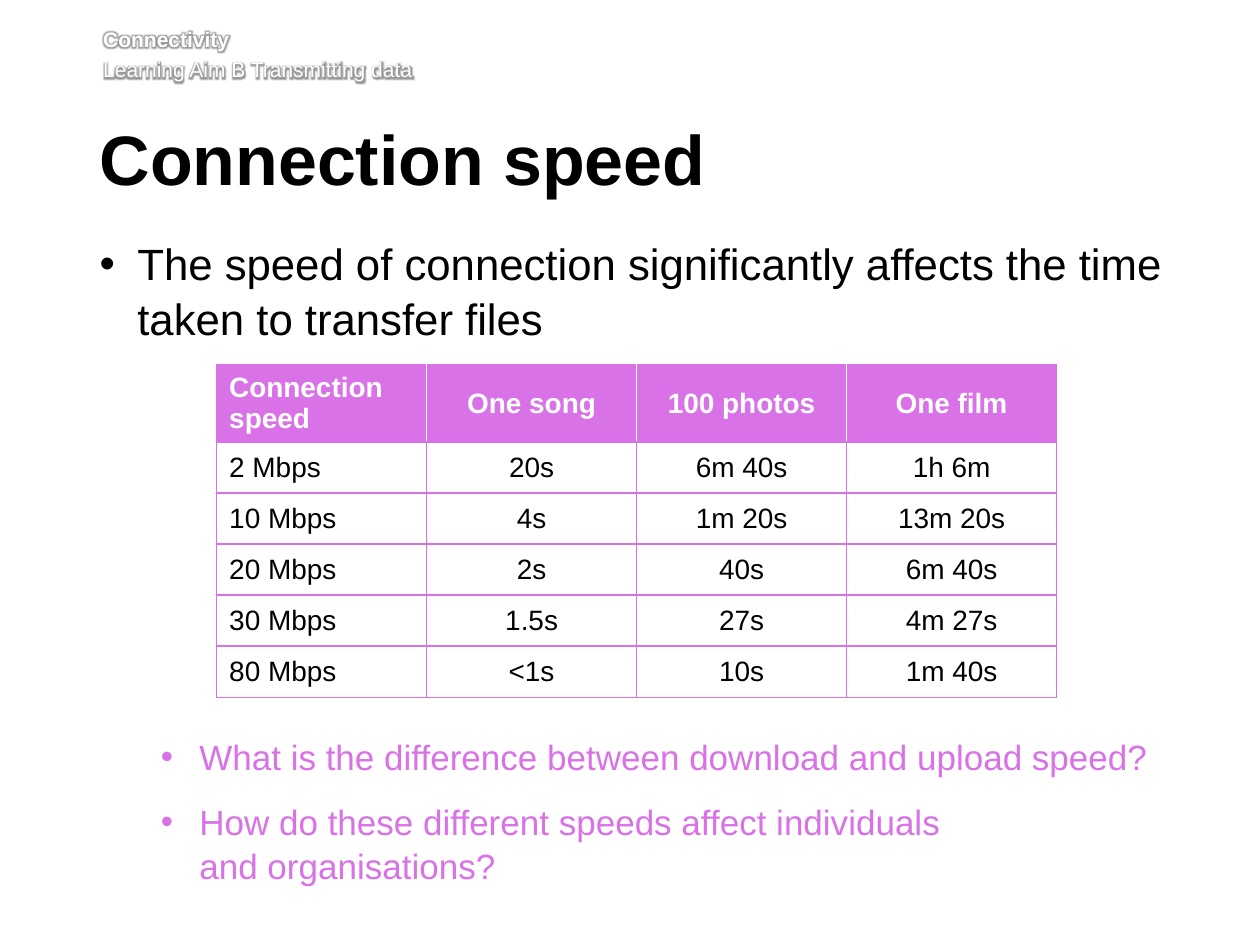
from lxml import etree
from pptx import Presentation
from pptx.dml.color import RGBColor
from pptx.enum.text import MSO_ANCHOR, MSO_AUTO_SIZE, PP_ALIGN
from pptx.oxml.ns import qn
from pptx.util import Pt

TOP, MIDDLE = MSO_ANCHOR.TOP, MSO_ANCHOR.MIDDLE
LEFT, CENTER = PP_ALIGN.LEFT, PP_ALIGN.CENTER
NO_FIT = MSO_AUTO_SIZE.NONE

FONT = "Arial"
COLORS = {"text": "000000", "light": "FFFFFF", "accent": "D972E7"}
ROWS = [
    ["Connection speed", "One song", "100 photos", "One film"],
    ["2 Mbps", "20s", "6m 40s", "1h 6m"],
    ["10 Mbps", "4s", "1m 20s", "13m 20s"],
    ["20 Mbps", "2s", "40s", "6m 40s"],
    ["30 Mbps", "1.5s", "27s", "4m 27s"],
    ["80 Mbps", "<1s", "10s", "1m 40s"],
]
COL_WIDTH, HEAD_HEIGHT, ROW_HEIGHT = 120, 44, 29.2


def rgb(name):
    return RGBColor.from_string(COLORS[name])


def write(para, text, size, color="text", bold=False, align=LEFT,
          before=0, after=0, line=None):
    para.text = text
    para.alignment = align
    para.space_before, para.space_after = Pt(before), Pt(after)
    if line:
        para.line_spacing = line
    for run in para.runs:
        font = run.font
        font.name, font.size, font.bold = FONT, Pt(size), bold
        font.color.rgb = rgb(color)


def place(shape, left, top, width, height, insets):
    """Set the bounds and text margins of a shape, and return its text frame."""
    shape.left, shape.top = Pt(left), Pt(top)
    shape.width, shape.height = Pt(width), Pt(height)
    frame = shape.text_frame
    frame.word_wrap, frame.auto_size = True, NO_FIT
    frame.vertical_anchor = TOP
    (frame.margin_left, frame.margin_top,
     frame.margin_right, frame.margin_bottom) = map(Pt, insets)
    return frame


def add_bullet(para, margin, hang):
    props = para._p.get_or_add_pPr()
    props.set("marL", str(Pt(margin)))
    props.set("indent", str(-Pt(hang)))
    etree.SubElement(props, qn("a:buFont"), typeface=FONT)
    etree.SubElement(props, qn("a:buChar"), char="•")


def add_glow(run):
    """Put a soft dark halo behind the text of a run."""
    effects = etree.Element(qn("a:effectLst"))
    glow = etree.SubElement(effects, qn("a:glow"), rad=str(Pt(5)))
    shade = etree.SubElement(glow, qn("a:srgbClr"), val=COLORS["text"])
    etree.SubElement(shade, qn("a:alpha"), val="40000")
    run.font._element.find(qn("a:solidFill")).addnext(effects)


def add_header(slide):
    box = slide.shapes.add_textbox(0, 0, 0, 0)
    frame = place(box, 59, 12.2, 635, 35.3, (0, 0, 0, 3.6))
    first, second = frame.paragraphs[0], frame.add_paragraph()
    write(first, "Connectivity", 12, "light", bold=True)
    write(second, "Learning Aim B Transmitting data", 12, "light", before=2.9)
    # The first line keeps its offset through the top margin
    frame.margin_top = Pt(2.9)
    for para in frame.paragraphs:
        add_glow(para.runs[0])


def fill_title(slide):
    frame = place(slide.shapes.title, 56.9, 71.3, 615.6, 52.6,
                  (0, 3.6, 7.2, 3.6))
    write(frame.paragraphs[0], "Connection speed", 40, bold=True, line=Pt(39))


def fill_body(slide):
    frame = place(slide.placeholders[1], 56.9, 133.9, 614.2, 380,
                  (0, 0, 7.2, 3.6))
    point = frame.paragraphs[0]
    add_bullet(point, 21.6, 21.6)
    write(point, "The speed of connection significantly affects the time "
          "taken to transfer files", 25, after=14, line=1.05)
    asks = [
        ("What is the difference between download and upload speed?", 208),
        ("How do these different speeds affect individuals\n"
         "and organisations?", 0),
    ]
    for text, gap in asks:
        para = frame.add_paragraph()
        para.level = 1
        add_bullet(para, 57, 22)
        write(para, text, 20, "accent", before=gap, after=12, line=1.05)


def set_borders(cell, **sides):
    """Draw 1 pt cell borders, each side given as a colour name."""
    props = cell._tc.get_or_add_tcPr()
    for spot, side in enumerate(("L", "R", "T", "B")):
        line = etree.Element(qn(f"a:ln{side}"), w=str(Pt(1)))
        fill = etree.SubElement(line, qn("a:solidFill"))
        etree.SubElement(fill, qn("a:srgbClr"),
                         val=COLORS[sides.get(side, "accent")])
        props.insert(spot, line)


def add_speeds(slide):
    count, last = len(ROWS), len(ROWS[0]) - 1
    table = slide.shapes.add_table(
        count, last + 1, Pt(123.8), Pt(208.5), Pt(COL_WIDTH * (last + 1)),
        Pt(HEAD_HEIGHT + ROW_HEIGHT * (count - 1))).table
    for col in table.columns:
        col.width = Pt(COL_WIDTH)
    for r, row in enumerate(ROWS):
        head = r == 0
        table.rows[r].height = Pt(HEAD_HEIGHT if head else ROW_HEIGHT)
        for c, text in enumerate(row):
            cell = table.cell(r, c)
            cell.vertical_anchor = MIDDLE
            cell.fill.solid()
            cell.fill.fore_color.rgb = rgb("accent" if head else "light")
            write(cell.text_frame.paragraphs[0], text, 16,
                  "light" if head else "text", bold=head,
                  align=CENTER if c else LEFT)
            set_borders(cell,
                        L="light" if head and c > 0 else "accent",
                        R="light" if head and c < last else "accent")


def main():
    deck = Presentation()
    deck.slide_width, deck.slide_height = Pt(720), Pt(540)
    slide = deck.slides.add_slide(deck.slide_layouts[1])
    add_header(slide)
    fill_title(slide)
    fill_body(slide)
    add_speeds(slide)
    deck.save("out.pptx")


if __name__ == "__main__":
    main()
